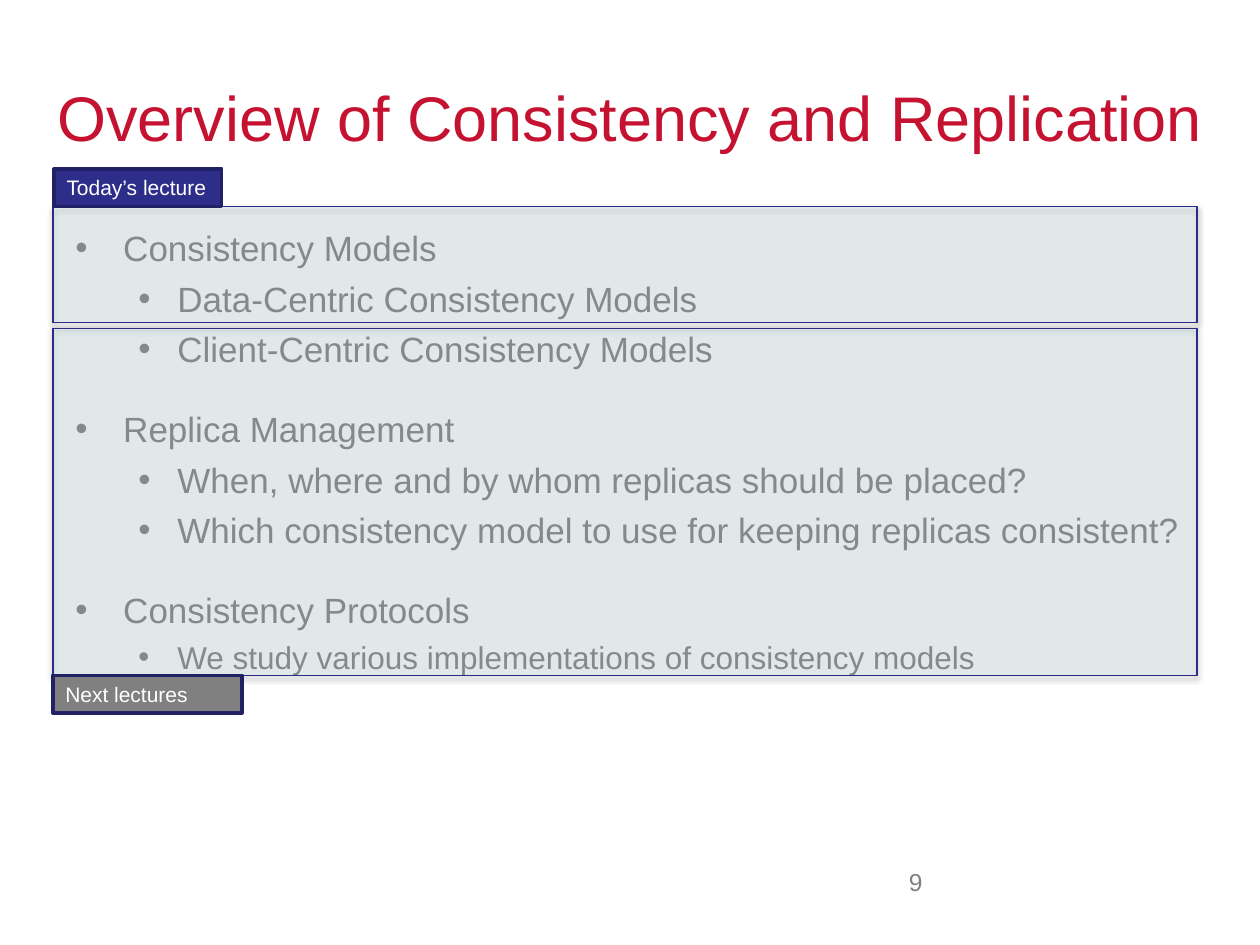
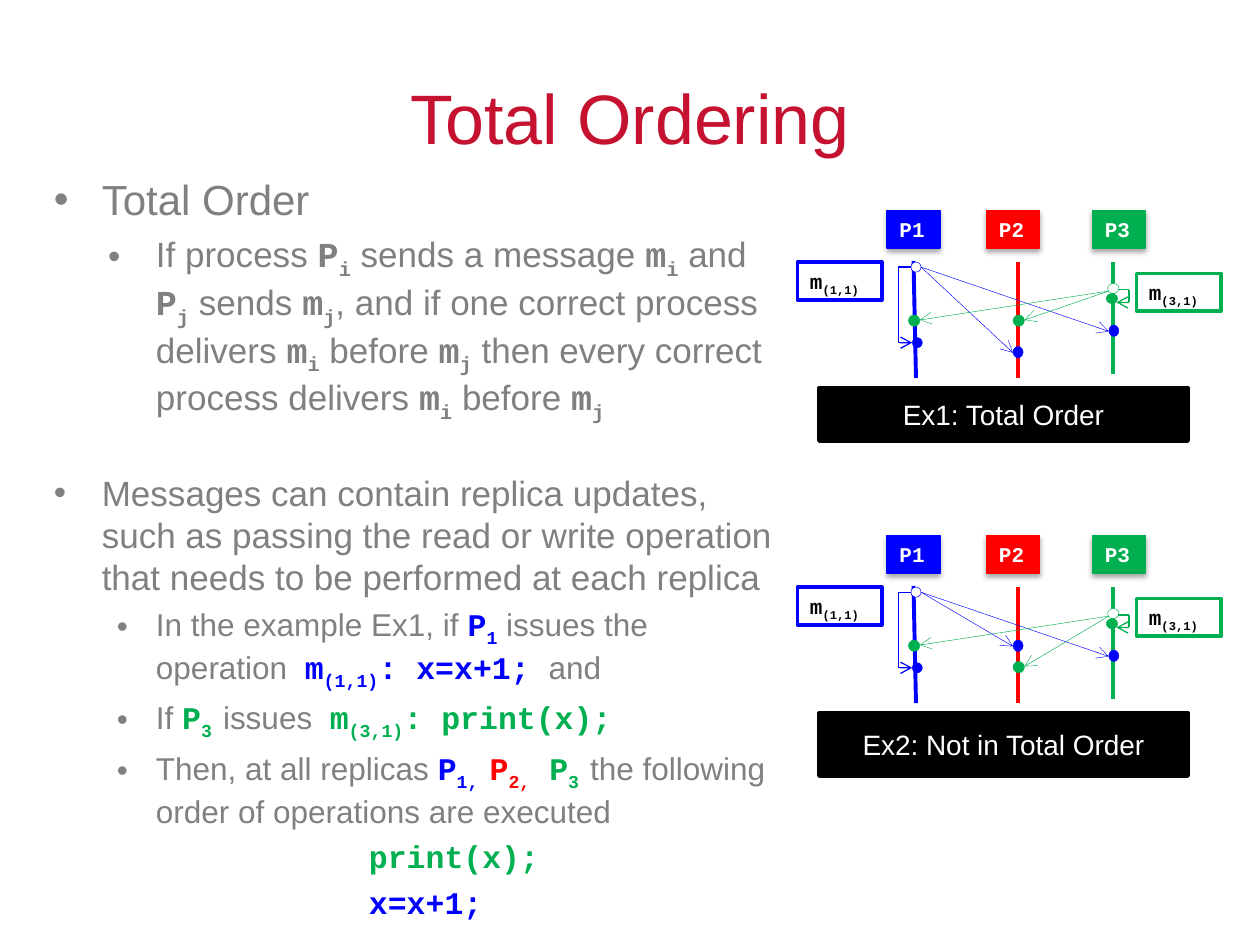
from dataclasses import dataclass
from typing import NamedTuple, Optional

from lxml import etree
from pptx import Presentation
from pptx.dml.color import RGBColor
from pptx.enum.shapes import MSO_CONNECTOR as Connector, MSO_SHAPE as Shape
from pptx.enum.text import MSO_ANCHOR as Anchor, PP_ALIGN as Align
from pptx.oxml.ns import qn
from pptx.util import Inches, Pt

# Shared look
CRIMSON = RGBColor(0xC4, 0x12, 0x30)
GREY = RGBColor(0x80, 0x80, 0x80)
WHITE = RGBColor(0xFF, 0xFF, 0xFF)
BLACK = RGBColor(0x00, 0x00, 0x00)
BLUE = RGBColor(0x00, 0x00, 0xFF)
RED = RGBColor(0xFF, 0x00, 0x00)
GREEN = RGBColor(0x00, 0xB0, 0x50)
PALE_TEAL = RGBColor(0xBB, 0xE0, 0xE3)
PANEL_EDGE = RGBColor(0x2A, 0x2A, 0x89)
NAVY = RGBColor(0x2D, 0x2D, 0x8A)
DARK_NAVY = RGBColor(0x21, 0x21, 0x66)
SANS, MONO = "Arial", "Courier New"
SPACING = 0.24  # space before a paragraph, as a share of its text size


class Run(NamedTuple):
    text: str
    color: RGBColor = GREY
    code: bool = False
    sub: bool = False


class Indent(NamedTuple):
    left: float
    first: float
    bullet: bool = True


class Box(NamedTuple):
    left: float
    top: float
    width: float
    height: float


@dataclass
class Line:
    runs: list[Run]
    size: float
    indent: Optional[Indent] = None
    gap: float = 0  # extra points above the paragraph
    align: Align = Align.LEFT


@dataclass
class Exchange:
    top: float
    caption: str
    caption_height: float
    blue_on_p2: float
    green_on_p2: float


TOPIC = Indent(0.38, -0.38)
DETAIL = Indent(0.81, -0.31)
WIDE_DETAIL = Indent(0.81, -0.38)
STATEMENT = Indent(2.5, 0, bullet=False)


def symbol(letter: str, index: str, color: RGBColor = GREY) -> list[Run]:
    return [Run(letter, color, True), Run(index, color, True, True)]


# Drawing helpers
def write(shape, lines: list[Line], anchor: Anchor = Anchor.TOP) -> None:
    frame = shape.text_frame
    frame.word_wrap = True
    frame.vertical_anchor = anchor
    for number, line in enumerate(lines):
        paragraph = frame.add_paragraph() if number else frame.paragraphs[0]
        paragraph.alignment = line.align
        if number:
            paragraph.space_before = Pt(round(line.size * SPACING + line.gap, 1))
        if line.indent:
            properties = paragraph._p.get_or_add_pPr()
            properties.set("marL", str(Inches(line.indent.left)))
            properties.set("indent", str(Inches(line.indent.first)))
            if line.indent.bullet:
                etree.SubElement(properties, qn("a:buFont"), typeface=SANS)
                etree.SubElement(properties, qn("a:buChar"), char="•")
        paragraph.font.size = Pt(line.size)
        paragraph.font.color.rgb = line.runs[0].color
        for part in line.runs:
            run = paragraph.add_run()
            run.text = part.text
            run.font.color.rgb = part.color
            formats = {"name": MONO if part.code else SANS,
                       "size": Pt(line.size), "bold": part.code}
            for name, value in formats.items():
                setattr(run.font, name, value)
            if part.sub:
                run._r.get_or_add_rPr().set("baseline", "-25000")


def add_text(slide, box: Box, lines: list[Line], anchor: Anchor = Anchor.TOP) -> None:
    write(slide.shapes.add_textbox(*map(Inches, box)), lines, anchor)


def add_title(slide, text: str, size: float, box: Box) -> None:
    add_text(slide, box, [Line([Run(text, CRIMSON)], size, align=Align.CENTER)],
             Anchor.MIDDLE)


def add_figure(slide, kind: Shape, box: Box, fill: RGBColor, edge: RGBColor,
               weight: float, shadow: int = 0, opacity: int = 100):
    shape = slide.shapes.add_shape(kind, *map(Inches, box))
    shape.shadow.inherit = False
    shape.fill.solid()
    shape.fill.fore_color.rgb = fill
    shape.line.color.rgb = edge
    shape.line.width = Pt(weight)
    properties = shape.element.spPr
    if opacity < 100:
        color = properties.find(qn("a:solidFill"))[0]
        etree.SubElement(color, qn("a:alpha"), val=str(opacity * 1000))
    if shadow:
        outer = etree.SubElement(
            properties.find(qn("a:effectLst")), qn("a:outerShdw"),
            blurRad=str(Pt(3.1)), dist=str(Pt(1.7)), dir="5400000", rotWithShape="0")
        color = etree.SubElement(outer, qn("a:srgbClr"), val="000000")
        etree.SubElement(color, qn("a:alpha"), val=str(shadow * 1000))
    return shape


def add_label(slide, box: Box, runs: list[Run], fill: RGBColor, edge: RGBColor,
              weight: float = 2, shadow: int = 0) -> None:
    shape = add_figure(slide, Shape.RECTANGLE, box, fill, edge, weight, shadow)
    write(shape, [Line(runs, 12)])


def add_line(slide, start: tuple[float, float], end: tuple[float, float],
             color: RGBColor, weight: float, arrow: bool = False) -> None:
    connector = slide.shapes.add_connector(
        Connector.STRAIGHT, *map(Inches, (*start, *end)))
    connector.line.color.rgb = color
    connector.line.width = Pt(weight)
    properties = connector.element.spPr
    if arrow:
        etree.SubElement(properties.find(qn("a:ln")), qn("a:tailEnd"), type="arrow")
    etree.SubElement(properties, qn("a:effectLst"))


# Overview slide
def build_overview(slide) -> None:
    add_title(slide, "Overview of Consistency and Replication", 36,
              Box(0.25, 0.3, 9.5, 1.25))
    topics = [
        ("Consistency Models", 20,
         ["Data-Centric Consistency Models", "Client-Centric Consistency Models"]),
        ("Replica Management", 20,
         ["When, where and by whom replicas should be placed?",
          "Which consistency model to use for keeping replicas consistent?"]),
        ("Consistency Protocols", 18,
         ["We study various implementations of consistency models"]),
    ]
    lines = []
    for topic, size, details in topics:
        lines.append(Line([Run(topic)], 20, TOPIC, gap=17))
        lines += [Line([Run(detail)], size, DETAIL) for detail in details]
    add_text(slide, Box(0.5, 1.75, 9, 4.95), lines)
    add_text(slide, Box(6.5, 6.83, 0.92, 0.52),
             [Line([Run("9")], 14, align=Align.RIGHT)])

    # Lecture panels with their tags
    lectures = [
        (Box(0.42, 1.64, 9.08, 0.92), "Today’s lecture", Box(0.43, 1.34, 1.33, 0.3), NAVY),
        (Box(0.42, 2.61, 9.08, 2.75), "Next lectures", Box(0.42, 5.36, 1.5, 0.3), GREY),
    ]
    for panel, tag, tag_box, tag_fill in lectures:
        add_figure(slide, Shape.RECTANGLE, panel, PALE_TEAL, PANEL_EDGE, 0.75,
                   shadow=38, opacity=20)
        add_label(slide, tag_box, [Run(tag, WHITE)], tag_fill, DARK_NAVY)


# Message exchange between three processes
def draw_exchange(slide, exchange: Exchange) -> None:
    top = exchange.top

    def line(x1: float, y1: float, x2: float, y2: float, color: RGBColor,
             weight: float, arrow: bool = False) -> None:
        add_line(slide, (x1, top + y1), (x2, top + y2), color, weight, arrow)

    def dot(left: float, y: float, fill: RGBColor, edge: RGBColor,
            width: float = 0.09, height: float = 0.09) -> None:
        add_figure(slide, Shape.OVAL, Box(left, top + y, width, height), fill, edge, 0.25)

    # Processes and their time lines
    processes = [("P1", 7.04, BLUE, 7.25, 7.27, 0.4, 1.33),
                 ("P2", 7.83, RED, 8.08, 8.08, 0.41, 1.33),
                 ("P3", 8.67, GREEN, 8.83, 8.83, 0.41, 1.3)]
    for name, left, color, start_x, end_x, start_y, end_y in processes:
        line(start_x, start_y, end_x, end_y, color, 2.25)
        add_label(slide, Box(left, top, 0.42, 0.3), [Run(name, WHITE, True)],
                  color, color, 0.75, shadow=35)

    # Message labels
    for left, y, index, color in [(6.33, 0.41, "(1,1)", BLUE), (9.02, 0.5, "(3,1)", GREEN)]:
        add_label(slide, Box(left, top + y, 0.67, 0.3), symbol("m", index, BLACK),
                  WHITE, color)

    # Sending points
    dot(7.23, 0.41, WHITE, BLUE, 0.08, 0.08)
    dot(8.79, 0.58, WHITE, GREEN, 0.09, 0.08)

    # Messages to the other processes
    blue_y, green_y = exchange.blue_on_p2, exchange.green_on_p2
    for x, y in [(8.04, blue_y), (8.8, 0.91)]:
        line(7.31, 0.45, x, y + 0.05, BLUE, 0.25, True)
        dot(x, y, BLUE, BLUE, 0.08)
    for x, y in [(8.04, green_y), (7.21, 0.83)]:
        line(8.8, 0.64, x + 0.09, y + 0.04, GREEN, 0.25, True)
        dot(x, y, GREEN, GREEN)

    # Messages to the sender itself
    for color, edge_x, outer_x, start_y, end_x, end_y in [
            (BLUE, 7.23, 7.13, 0.45, 7.24, 1.05), (GREEN, 8.87, 8.96, 0.63, 8.86, 0.73)]:
        line(edge_x, start_y, outer_x, start_y, color, 0.75)
        line(outer_x, start_y, outer_x, end_y, color, 0.75)
        line(outer_x, end_y, end_x, end_y, color, 0.75, True)
    dot(7.24, 1.01, BLUE, BLUE, 0.08, 0.08)
    dot(8.78, 0.66, GREEN, GREEN, 0.09, 0.08)

    caption = add_figure(slide, Shape.RECTANGLE,
                         Box(6.5, top + 1.41, 2.93, exchange.caption_height),
                         BLACK, BLACK, 2)
    write(caption, [Line([Run(exchange.caption, WHITE)], 16, align=Align.CENTER)],
          Anchor.MIDDLE)


# Total ordering slide
def build_total_ordering(slide) -> None:
    add_title(slide, "Total Ordering", 40, Box(0.5, 0.3, 9, 1.25))
    m_i, m_j = symbol("m", "i"), symbol("m", "j")
    definition = [
        Run("If process "), *symbol("P", "i"), Run(" sends a message "), *m_i,
        Run(" and "), *symbol("P", "j"), Run(" sends "), *m_j,
        Run(", and if one correct process delivers "), *m_i, Run(" before "), *m_j,
        Run(" then every correct process delivers "), *m_i, Run(" before "), *m_j]
    first_operation = [
        Run("In the example Ex1, if "), *symbol("P", "1", BLUE),
        Run(" issues the operation  "), *symbol("m", "(1,1)", BLUE),
        Run(": x=x+1; ", BLUE, True), Run("and")]
    second_operation = [
        Run("If "), *symbol("P", "3 ", GREEN), Run("issues  "),
        *symbol("m", "(3,1)", GREEN), Run(": print(x);", GREEN, True)]
    outcome = [
        Run("Then, at all replicas "), *symbol("P", "1, ", BLUE),
        *symbol("P", "2,", RED), *symbol(" P", "3 ", GREEN),
        Run("the following order of operations are executed")]
    updates = ("Messages can contain replica updates, such as passing the read or "
               "write operation that needs to be performed at each replica")
    add_text(slide, Box(0.33, 1.33, 6, 5.92), [
        Line([Run("Total Order")], 24, TOPIC),
        Line(definition, 20, WIDE_DETAIL),
        Line([Run(updates)], 20, TOPIC, gap=22.5),
        Line(first_operation, 18, DETAIL),
        Line(second_operation, 18, DETAIL),
        Line(outcome, 18, DETAIL),
        Line([Run("print(x);", GREEN, True)], 18, STATEMENT),
        Line([Run("x=x+1;", BLUE, True)], 18, STATEMENT),
    ])
    for exchange in [Exchange(1.67, "Ex1: Total Order", 0.42, 1.08, 0.83),
                     Exchange(4.25, "Ex2: Not in Total Order", 0.5, 0.83, 1.0)]:
        draw_exchange(slide, exchange)


def main() -> None:
    presentation = Presentation()
    presentation.slide_width = Inches(10)
    presentation.slide_height = Inches(7.5)
    blank = presentation.slide_layouts[6]
    for build in (build_overview, build_total_ordering):
        build(presentation.slides.add_slide(blank))
    presentation.save("out.pptx")


if __name__ == "__main__":
    main()
